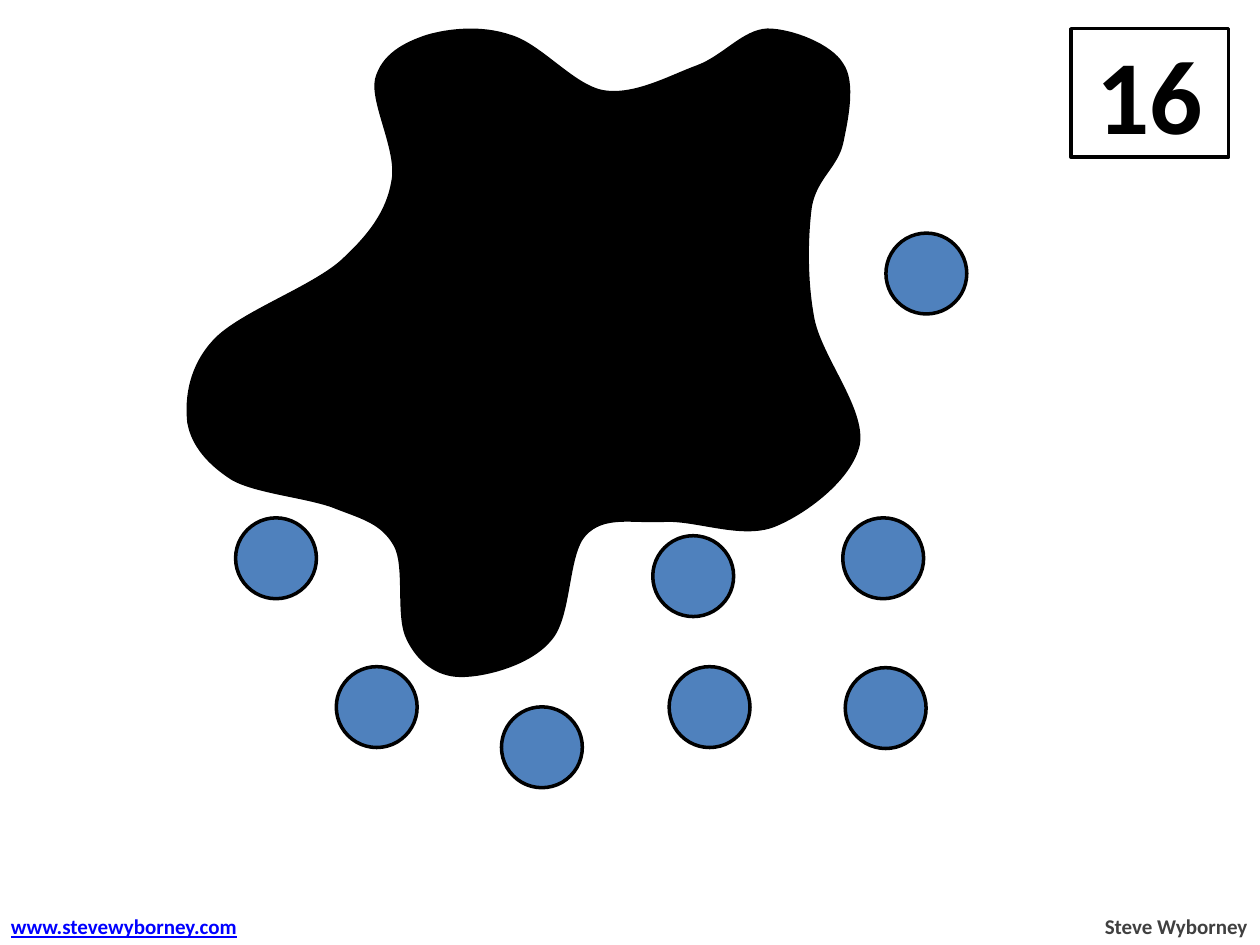
from lxml.etree import SubElement
from pptx import Presentation
from pptx.dml.color import RGBColor
from pptx.enum.shapes import MSO_SHAPE
from pptx.enum.text import MSO_ANCHOR, MSO_AUTO_SIZE, PP_ALIGN
from pptx.oxml.ns import qn
from pptx.util import Cm, Pt

BLACK = RGBColor(0x00, 0x00, 0x00)
WHITE = RGBColor(0xFF, 0xFF, 0xFF)
BLUE = RGBColor(0x4F, 0x81, 0xBD)
GRAY = RGBColor(0x40, 0x40, 0x40)
LINK_BLUE = RGBColor(0x00, 0x00, 0xFF)


def style_shape(shape, fill_color):
    shape.shadow.inherit = False
    shape.fill.solid()
    shape.fill.fore_color.rgb = fill_color
    shape.line.color.rgb = BLACK
    shape.line.width = Pt(2)


def write_text(text_frame, text, size, color, alignment):
    paragraph = text_frame.paragraphs[0]
    paragraph.text = text
    paragraph.alignment = alignment
    font = paragraph.font
    font.name = "Calibri"
    font.size = Pt(size)
    font.bold = True
    font.color.rgb = color
    return paragraph


presentation = Presentation()
presentation.slide_width = Cm(25.4)
presentation.slide_height = Cm(19.05)
slide = presentation.slides.add_slide(presentation.slide_layouts[6])
shapes = slide.shapes

total_box = shapes.add_shape(MSO_SHAPE.RECTANGLE, Cm(21.59), Cm(0.58), Cm(3.18), Cm(2.59))
style_shape(total_box, WHITE)
total_box.text_frame.vertical_anchor = MSO_ANCHOR.MIDDLE
write_text(total_box.text_frame, "16", 60, BLACK, PP_ALIGN.CENTER)

dot_size = Cm(1.63)
dot_positions = [
    (13.49, 13.44), (17.04, 13.46), (6.78, 13.44), (4.75, 10.44),
    (13.16, 10.8), (16.99, 10.44), (10.11, 14.25), (17.86, 4.7),
]
for left, top in dot_positions:
    dot = shapes.add_shape(MSO_SHAPE.OVAL, Cm(left), Cm(top), dot_size, dot_size)
    style_shape(dot, BLUE)

footers = [
    ("Steve Wyborney", 22, 3.4, GRAY, PP_ALIGN.RIGHT, False),
    ("www.stevewyborney.com", -0.03, 5.21, LINK_BLUE, PP_ALIGN.LEFT, True),
]
for text, left, width, color, alignment, underline in footers:
    footer = shapes.add_textbox(Cm(left), Cm(18.29), Cm(width), Cm(0.77))
    footer.text_frame.word_wrap = False
    footer.text_frame.auto_size = MSO_AUTO_SIZE.NONE
    paragraph = write_text(footer.text_frame, text, 12, color, alignment)
    paragraph.font.underline = underline

splat_start = (185, 380)
splat_curves = [
    [(166, 368), (153, 353), (150, 335)],
    [(148, 316), (151, 291), (171, 270)],
    [(191, 249), (247, 229), (271, 208)],
    [(294, 187), (308, 168), (312, 144)],
    [(317, 120), (295, 82), (299, 63)],
    [(304, 44), (321, 35), (339, 29)],
    [(356, 24), (382, 21), (405, 29)],
    [(429, 36), (455, 69), (479, 73)],
    [(504, 77), (532, 61), (554, 53)],
    [(575, 45), (590, 25), (609, 24)],
    [(628, 24), (659, 36), (668, 51)],
    [(678, 65), (672, 94), (668, 113)],
    [(664, 132), (647, 141), (643, 164)],
    [(640, 187), (639, 221), (645, 253)],
    [(651, 284), (686, 325), (681, 353)],
    [(675, 380), (639, 407), (614, 417)],
    [(588, 427), (551, 411), (526, 413)],
    [(501, 414), (479, 408), (464, 424)],
    [(449, 440), (453, 490), (436, 508)],
    [(420, 527), (385, 536), (366, 536)],
    [(347, 536), (332, 524), (324, 507)],
    [(315, 490), (323, 450), (314, 433)],
    [(304, 415), (289, 411), (268, 403)],
    [(247, 394), (205, 391), splat_start],
]
builder = shapes.build_freeform(*splat_start, scale=Cm(2.54) / 100)
for curve in splat_curves:
    builder.add_line_segments(curve, close=False)
splat = builder.convert_to_shape()
style_shape(splat, BLACK)

outline = next(splat.element.iter(qn("a:path")))
segments = outline.findall(qn("a:lnTo"))
for index in range(0, len(segments), 3):
    curve = SubElement(outline, qn("a:cubicBezTo"))
    for segment in segments[index:index + 3]:
        curve.append(segment[0])
        outline.remove(segment)
SubElement(outline, qn("a:close"))

presentation.save("out.pptx")
